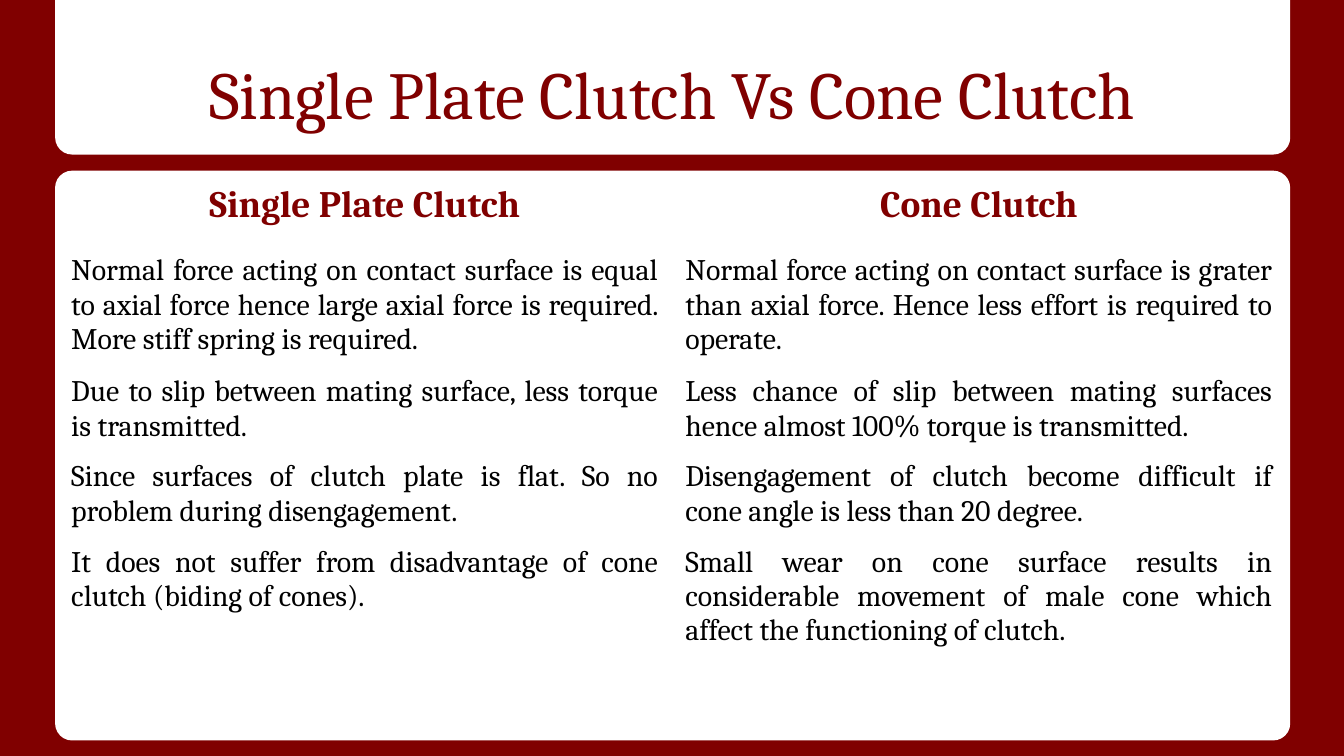
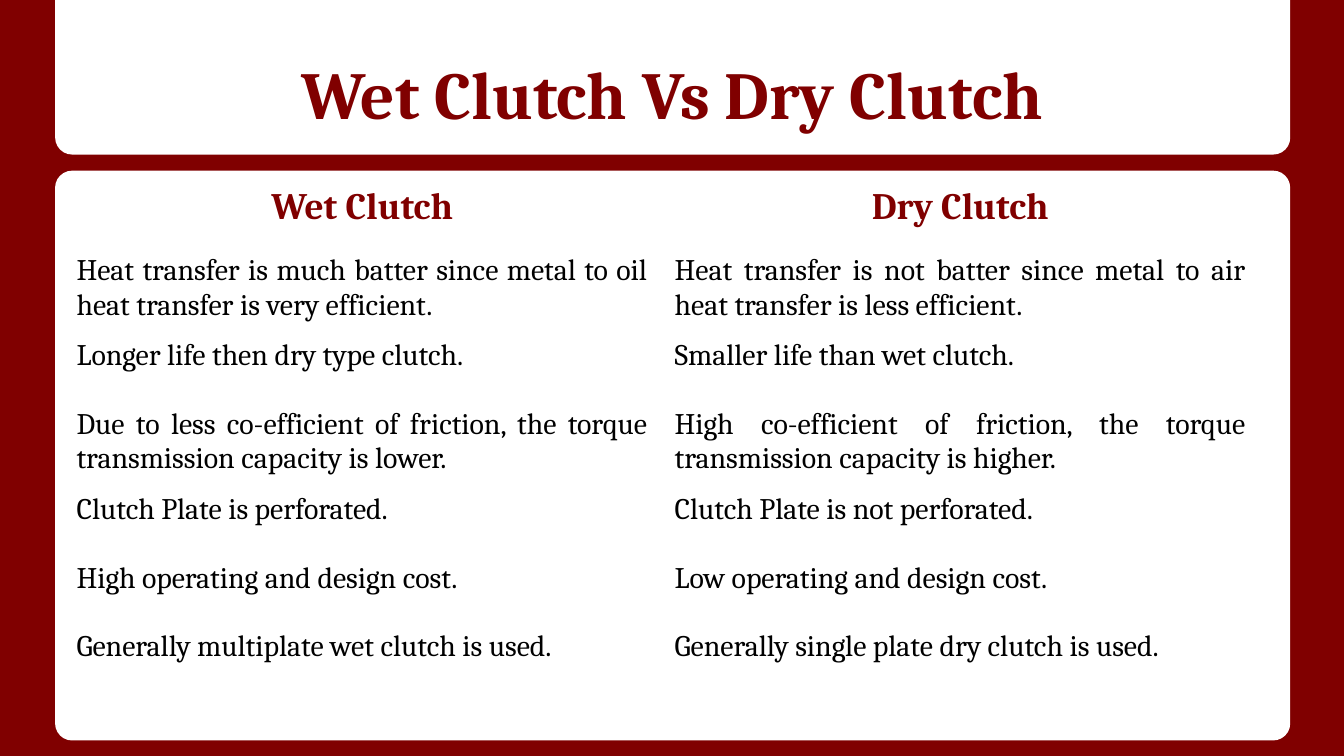
from pptx import Presentation
from pptx.dml.color import RGBColor
from pptx.enum.shapes import MSO_SHAPE as Shape
from pptx.enum.text import MSO_ANCHOR as Anchor, PP_ALIGN as Align
from pptx.oxml.ns import qn
from pptx.util import Inches, Pt

COLORS = {"maroon": "800000", "panel": "FFFFFF", "body": "000000"}
FONT = "Cambria"
PLAIN_TABLE_STYLE = "{2D5ABB26-0587-4C30-8999-92F81FD0307C}"
WIDTH = 10
HEIGHT = WIDTH * 9 / 16
PANEL_WIDTH = 9.19
PANEL_LEFT = 0.41

COMPARISONS = [
    {
        "title": "Single Plate Clutch Vs Cone Clutch",
        "bold_title": False,
        "corner": (0.43, 1.32),
        "column_width": 4.57,
        "row_height": 0.52,
        "rows": [
            ("Single Plate Clutch", "Cone Clutch"),
            ("Normal force acting on contact surface is equal to axial force hence "
             "large axial force is required. More stiff spring is required.",
             "Normal force acting on contact surface is grater than axial force. "
             "Hence less effort is required to operate."),
            ("Due to slip between mating surface, less torque is transmitted.",
             "Less chance of slip between mating surfaces hence almost 100% torque "
             "is transmitted."),
            ("Since surfaces of clutch plate is flat. So no problem during disengagement.",
             "Disengagement of clutch become difficult if cone angle is less than 20 degree."),
            ("It does not suffer from disadvantage of cone clutch (biding of cones).",
             "Small wear on cone surface results in considerable movement of male cone "
             "which affect the functioning of clutch."),
        ],
    },
    {
        "title": "Wet Clutch Vs Dry Clutch",
        "bold_title": True,
        "corner": (0.47, 1.33),
        "column_width": 4.45,
        "row_height": 0.51,
        "rows": [
            ("Wet Clutch", "Dry Clutch"),
            ("Heat transfer is much batter since metal to oil heat transfer is very efficient.",
             "Heat transfer is not batter since metal to air heat transfer is less efficient."),
            ("Longer life then dry type clutch.", "Smaller life than wet clutch."),
            ("Due to less co-efficient of friction, the torque transmission capacity is lower.",
             "High co-efficient of friction, the torque transmission capacity is higher."),
            ("Clutch Plate is perforated.", "Clutch Plate is not perforated."),
            ("High operating and design cost.", "Low operating and design cost."),
            ("Generally multiplate wet clutch is used.",
             "Generally single plate dry clutch is used."),
        ],
    },
]


def color(name):
    return RGBColor.from_string(COLORS[name])


def write(frame, text, size, color_name, align, bold=False):
    frame.text = text
    para = frame.paragraphs[0]
    para.alignment = align
    font = para.runs[0].font
    font.name, font.size, font.bold = FONT, Pt(size), bold
    font.color.rgb = color(color_name)


def add_panel(slide, kind, top, height, radius):
    panel = slide.shapes.add_shape(
        kind, Inches(PANEL_LEFT), Inches(top), Inches(PANEL_WIDTH), Inches(height))
    panel.adjustments[0] = radius
    panel.shadow.inherit = False
    panel.fill.solid()
    panel.fill.fore_color.rgb = color("panel")
    panel.line.fill.background()
    return panel


def add_frame(slide):
    """Maroon background with a content panel and a title panel hanging from the top."""
    slide.background.fill.solid()
    slide.background.fill.fore_color.rgb = color("maroon")
    add_panel(slide, Shape.ROUNDED_RECTANGLE, 1.27, 4.24, 0.03)
    title_panel = add_panel(slide, Shape.ROUND_2_SAME_RECTANGLE, 0, 1.15, 0.11)
    title_panel.rotation = 180


def add_title(slide, text, bold):
    box = slide.shapes.add_textbox(Inches(0.5), Inches(0.15), Inches(9), Inches(0.94))
    frame = box.text_frame
    frame.word_wrap = True
    frame.vertical_anchor = Anchor.BOTTOM
    frame.margin_left = frame.margin_right = Inches(0.1)
    frame.margin_top = frame.margin_bottom = Inches(0.1)
    write(frame, text, 36, "maroon", Align.CENTER, bold)


def add_comparison(slide, rows, corner, column_width, row_height):
    left, top = corner
    column_count = len(rows[0])
    holder = slide.shapes.add_table(
        len(rows), column_count, Inches(left), Inches(top),
        Inches(column_width * column_count), Inches(row_height * len(rows)))
    for style in holder.element.iter(qn("a:tableStyleId")):
        style.text = PLAIN_TABLE_STYLE
    table = holder.table
    table.first_row = table.horz_banding = False
    for row_index, texts in enumerate(rows):
        table.rows[row_index].height = Inches(row_height)
        for column_index, text in enumerate(texts):
            cell = table.cell(row_index, column_index)
            cell.fill.background()
            if row_index == 0:
                write(cell.text_frame, text, 20, "maroon", Align.CENTER, bold=True)
            else:
                write(cell.text_frame, text, 16, "body", Align.JUSTIFY)


def main():
    deck = Presentation()
    deck.slide_width, deck.slide_height = Inches(WIDTH), Inches(HEIGHT)
    blank = deck.slide_layouts[6]
    for comparison in COMPARISONS:
        slide = deck.slides.add_slide(blank)
        add_frame(slide)
        add_title(slide, comparison["title"], comparison["bold_title"])
        add_comparison(slide, comparison["rows"], comparison["corner"],
                       comparison["column_width"], comparison["row_height"])
    deck.save("out.pptx")


if __name__ == "__main__":
    main()
